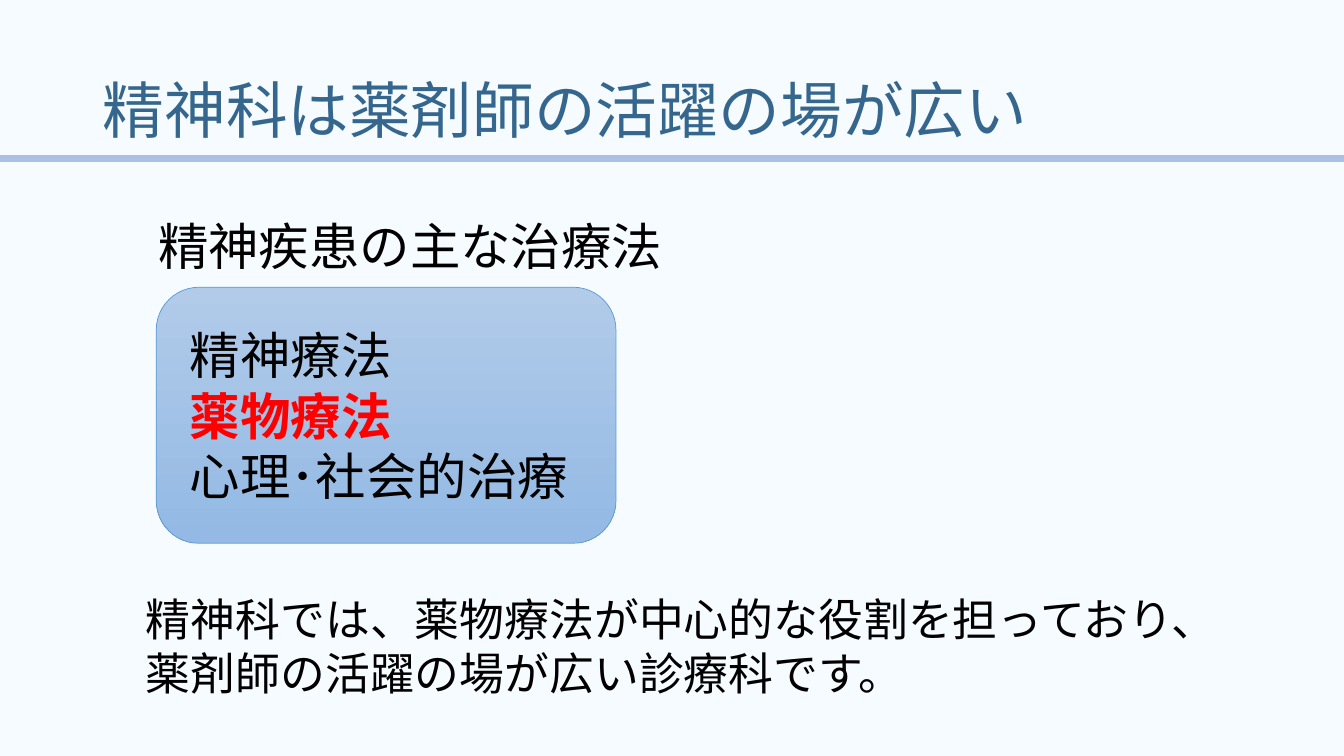
from lxml.etree import SubElement
from pptx import Presentation
from pptx.dml.color import RGBColor
from pptx.enum.shapes import MSO_CONNECTOR as Connector, MSO_SHAPE as Shape
from pptx.enum.text import MSO_ANCHOR as Anchor, PP_ALIGN as Align
from pptx.oxml.ns import qn
from pptx.util import Inches, Pt

# Content
TITLE = "精神科は薬剤師の活躍の場が広い"
HEADING = "精神疾患の主な治療法"
THERAPIES = [
    ("精神療法", {}),
    ("薬物療法", {"color": "FF0000", "bold": True}),
    ("心理･社会的治療", {}),
]
SUMMARY = "精神科では、薬物療法が中心的な役割を担っており、薬剤師の活躍の場が広い診療科です。"

FONT = "Noto Sans CJK JP"
WIDTH, HEIGHT = 13.33, 7.5
RULE_Y = 1.57


def rgb(value):
    return RGBColor.from_string(value)


def place(box, left, top, width, height):
    box.left, box.top = Inches(left), Inches(top)
    box.width, box.height = Inches(width), Inches(height)


def write(para, text, size=36, color="000000", bold=False, spacing=1.0):
    para.alignment = Align.LEFT
    para.line_spacing = spacing
    span = para.add_run()
    span.text = text
    span.font.name = FONT
    span.font.size = Pt(size)
    span.font.bold = bold
    span.font.color.rgb = rgb(color)
    SubElement(span.font._element, qn("a:ea"), typeface=FONT)


def add_text(page, text, left, top, width, height, **style):
    box = page.shapes.add_textbox(*map(Inches, (left, top, width, height)))
    box.text_frame.word_wrap = True
    write(box.text_frame.paragraphs[0], text, **style)


deck = Presentation()
deck.slide_width, deck.slide_height = Inches(WIDTH), Inches(HEIGHT)
page = deck.slides.add_slide(deck.slide_layouts[5])
page.background.fill.solid()
page.background.fill.fore_color.rgb = rgb("F5FBFE")

# Title and the rule below it
title = page.shapes.title
place(title, 0.92, 0.4, 11.5, 1.45)
title.text_frame.vertical_anchor = Anchor.MIDDLE
write(title.text_frame.paragraphs[0], TITLE, size=44, color="35668D", spacing=0.9)

rule = page.shapes.add_connector(
    Connector.STRAIGHT, 0, Inches(RULE_Y), Inches(WIDTH), Inches(RULE_Y))
rule.line.color.rgb = rgb("ABC0E4")
rule.line.width = Pt(5.25)
SubElement(rule._element.spPr, qn("a:effectLst"))

# Heading and the panel of therapies
add_text(page, HEADING, 1.47, 2.08, 11.86, 0.71)

panel = page.shapes.add_shape(
    Shape.ROUNDED_RECTANGLE, *map(Inches, (1.55, 2.85, 4.56, 2.54)))
panel.shadow.inherit = False
panel.fill.gradient()
panel.fill.gradient_angle = 270
for stop, color in zip(panel.fill.gradient_stops, ("B1CBE9", "93B9E4")):
    stop.color.rgb = rgb(color)
panel.line.color.rgb = rgb("5B9BD5")
panel.line.width = Pt(0.5)

frame = panel.text_frame
frame.word_wrap = True
frame.vertical_anchor = Anchor.MIDDLE
frame.margin_left = Inches(0.21)
for index, (therapy, style) in enumerate(THERAPIES):
    para = frame.add_paragraph() if index else frame.paragraphs[0]
    write(para, therapy, **style)

# Summary
add_text(page, SUMMARY, 1.35, 5.82, 10.94, 1.18, size=32)

deck.save("out.pptx")
